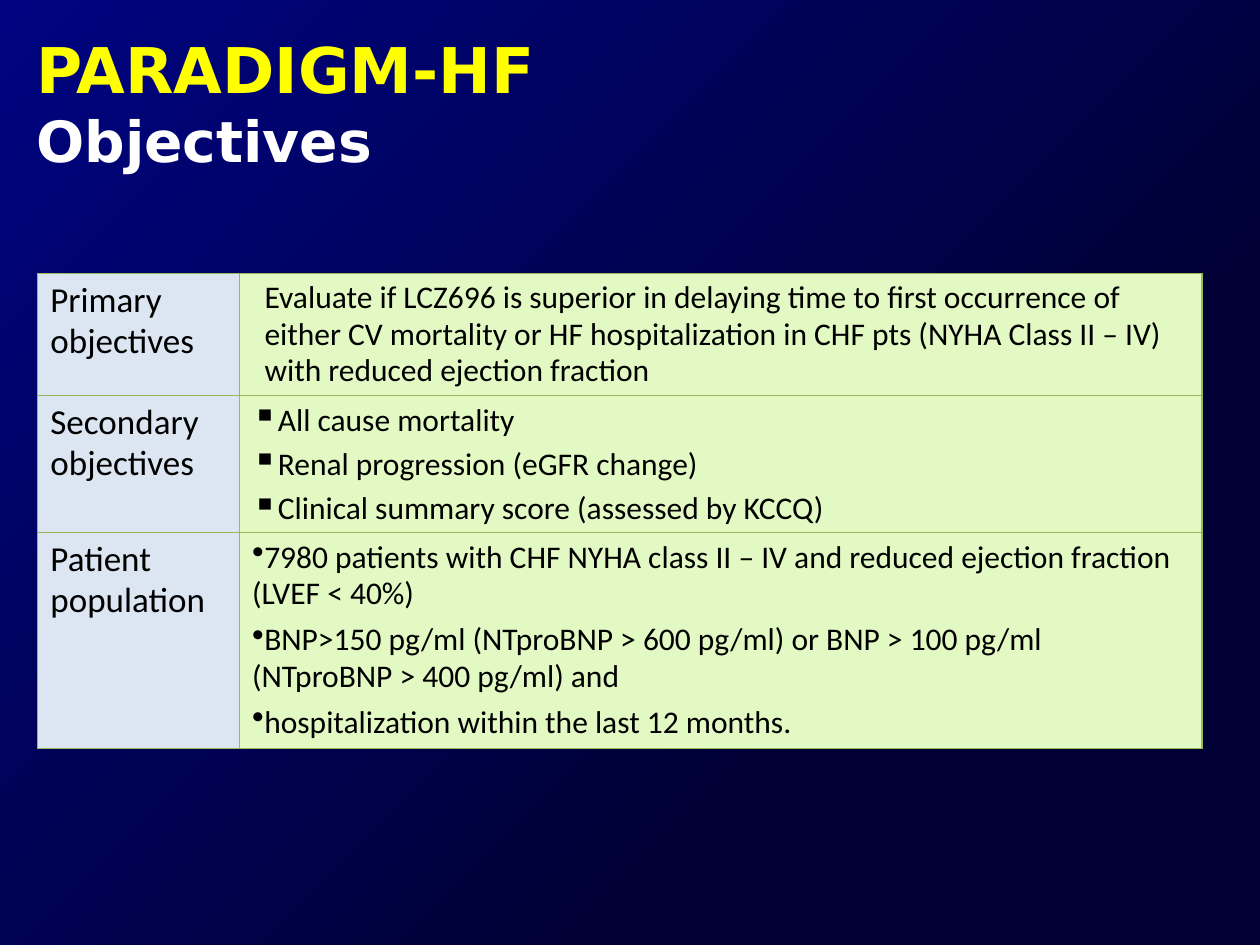
from dataclasses import dataclass

from lxml import etree
from pptx import Presentation
from pptx.dml.color import RGBColor
from pptx.enum.shapes import MSO_SHAPE
from pptx.oxml import parse_xml
from pptx.oxml.ns import nsdecls, qn
from pptx.util import Inches, Pt

RECTANGLE = MSO_SHAPE.RECTANGLE

BLACK = RGBColor(0x00, 0x00, 0x00)
WHITE = RGBColor(0xFF, 0xFF, 0xFF)
YELLOW = RGBColor(0xFF, 0xFF, 0x00)
NAVY = RGBColor(0x00, 0x00, 0x35)
BLUE = RGBColor(0x00, 0x04, 0x80)
PALE_BLUE = RGBColor(0xDC, 0xE6, 0xF2)
PALE_GREEN = RGBColor(0xE3, 0xF9, 0xC3)
GREEN = RGBColor(0x98, 0xB9, 0x55)

LABEL_FORMAT = {"name": "Calibri", "size": Pt(20)}
DETAIL_FORMAT = {"name": "Calibri", "size": Pt(18)}
TITLE_FORMAT = {"name": "DejaVu Sans", "bold": True}


@dataclass
class ObjectiveRow:
    label: str
    details: list[str]
    height: float
    bullet: str = ""
    gap: float = 0


ROWS = [
    ObjectiveRow("Primary objectives", [
        "Evaluate if LCZ696 is superior in delaying time to first occurrence of "
        "either CV mortality or HF hospitalization in CHF pts (NYHA Class II – IV) "
        "with reduced ejection fraction",
    ], 0.97),
    ObjectiveRow("Secondary objectives", [
        "All cause mortality",
        "Renal progression (eGFR change)",
        "Clinical summary score (assessed by KCCQ)",
    ], 1.09, "▪", 4.5),
    ObjectiveRow("Patient population", [
        "7980 patients with CHF NYHA class II – IV and reduced ejection fraction (LVEF < 40%)",
        "BNP>150 pg/ml (NTproBNP > 600 pg/ml) or BNP > 100 pg/ml (NTproBNP > 400 pg/ml) and",
        "hospitalization within the last 12 months.",
    ], 1.71, "•", 5.4),
]


def set_font(font, formats: dict, color: RGBColor) -> None:
    for name, value in formats.items():
        setattr(font, name, value)
    font.color.rgb = color


def add_background(page, width: int, height: int) -> None:
    """Radial gradient, dark at the lower right corner."""
    panel = page.shapes.add_shape(RECTANGLE, 0, 0, width, height)
    panel.shadow.inherit = False
    panel.line.fill.background()
    gradient = parse_xml(
        f'<a:gradFill {nsdecls("a")} rotWithShape="1"><a:gsLst>'
        f'<a:gs pos="30000"><a:srgbClr val="{NAVY}"/></a:gs>'
        f'<a:gs pos="100000"><a:srgbClr val="{BLUE}"/></a:gs></a:gsLst>'
        '<a:path path="circle"><a:fillToRect l="100000" t="100000"/></a:path>'
        '</a:gradFill>')
    panel._element.spPr.find(qn("a:prstGeom")).addnext(gradient)


def add_title(page) -> None:
    box = page.shapes.add_textbox(Inches(0.19), Inches(0.19), Inches(8.5), Inches(1.17))
    box.text_frame.word_wrap = True
    para = box.text_frame.paragraphs[0]
    lines = [("PARADIGM-HF", 36, YELLOW), ("Objectives", 32.4, WHITE)]
    for index, (text, size, color) in enumerate(lines):
        if index:
            para.add_line_break()
        span = para.add_run()
        span.text = text
        set_font(span.font, TITLE_FORMAT | {"size": Pt(size)}, color)


def add_bullet(para, character: str) -> None:
    properties = para._p.get_or_add_pPr()
    color = etree.SubElement(properties, qn("a:buClr"))
    etree.SubElement(color, qn("a:srgbClr"), val=str(BLACK))
    etree.SubElement(properties, qn("a:buSzPct"), val="110000")
    etree.SubElement(properties, qn("a:buChar"), char=character)


def add_borders(cell) -> None:
    properties = cell._tc.get_or_add_tcPr()
    for index, side in enumerate(("lnL", "lnR", "lnT", "lnB")):
        properties.insert(index, parse_xml(
            f'<a:{side} {nsdecls("a")} w="{Pt(0.75)}"><a:solidFill>'
            f'<a:srgbClr val="{GREEN}"/></a:solidFill></a:{side}>'))


def fill_cell(cell, texts: list[str], formats: dict, color: RGBColor,
              bullet: str = "", gap: float = 0, indent: float = 0) -> None:
    cell.fill.solid()
    cell.fill.fore_color.rgb = color
    add_borders(cell)
    for index, text in enumerate(texts):
        para = cell.text_frame.paragraphs[0] if index == 0 else cell.text_frame.add_paragraph()
        if bullet:
            add_bullet(para, bullet)
        if indent:
            para._p.get_or_add_pPr().set("marL", str(Inches(indent)))
        para.line_spacing = 0.95
        if index:
            para.space_before = Pt(gap)
        span = para.add_run()
        span.text = text
        set_font(span.font, formats, BLACK)


def add_objectives(page, rows: list[ObjectiveRow]) -> None:
    total = sum(row.height for row in rows)
    table = page.shapes.add_table(len(rows), 2, Inches(0.3), Inches(2.17),
                                  Inches(9.24), Inches(total)).table
    table.first_row = False
    table.horz_banding = False
    for column, width in zip(table.columns, (1.6, 7.64)):
        column.width = Inches(width)
    for index, row in enumerate(rows):
        table.rows[index].height = Inches(row.height)
        fill_cell(table.cell(index, 0), [row.label], LABEL_FORMAT, PALE_BLUE)
        fill_cell(table.cell(index, 1), row.details, DETAIL_FORMAT, PALE_GREEN,
                  row.bullet, row.gap, 0 if row.bullet else 0.1)


def main() -> None:
    deck = Presentation()
    deck.slide_width = Inches(10)
    deck.slide_height = Inches(7.5)
    page = deck.slides.add_slide(deck.slide_layouts[6])
    add_background(page, deck.slide_width, deck.slide_height)
    add_title(page)
    add_objectives(page, ROWS)
    deck.save("out.pptx")


if __name__ == "__main__":
    main()
